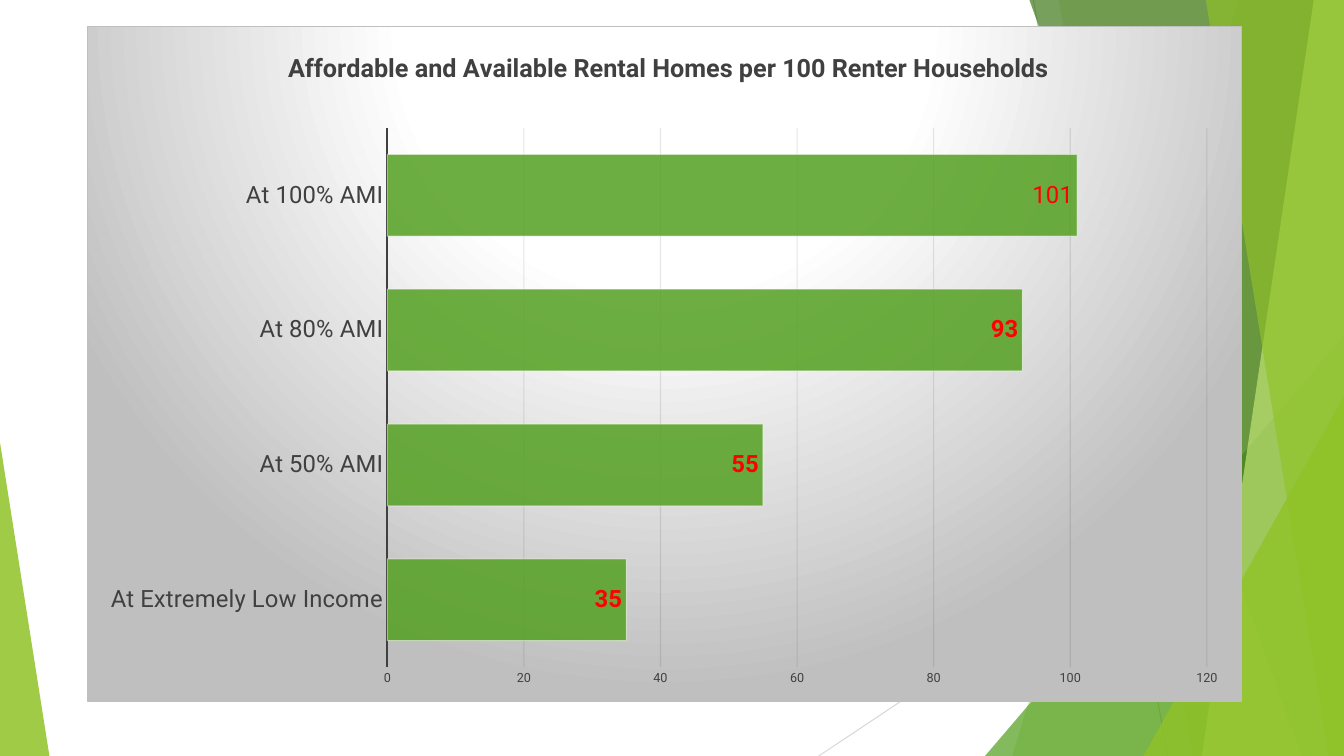
from lxml import etree
from pptx import Presentation
from pptx.chart.data import CategoryChartData
from pptx.dml.color import RGBColor
from pptx.enum.chart import XL_CHART_TYPE, XL_LABEL_POSITION, XL_TICK_MARK
from pptx.enum.shapes import MSO_CONNECTOR, MSO_SHAPE
from pptx.oxml import parse_xml
from pptx.oxml.ns import nsdecls, qn
from pptx.util import Inches, Pt

BAR_CLUSTERED = XL_CHART_TYPE.BAR_CLUSTERED
INSIDE_END = XL_LABEL_POSITION.INSIDE_END
NO_TICK = XL_TICK_MARK.NONE
STRAIGHT = MSO_CONNECTOR.STRAIGHT
TRIANGLE = MSO_SHAPE.ISOSCELES_TRIANGLE

WHITE = RGBColor(0xFF, 0xFF, 0xFF)
SILVER = RGBColor(0xBF, 0xBF, 0xBF)
PALE_GRAY = RGBColor(0xD9, 0xD9, 0xD9)
CHARCOAL = RGBColor(0x40, 0x40, 0x40)
NEAR_BLACK = RGBColor(0x0D, 0x0D, 0x0D)
RED = RGBColor(0xFF, 0x00, 0x00)
LIME = RGBColor(0x90, 0xC2, 0x26)
PALE_LIME = RGBColor(0xC0, 0xE4, 0x74)
GREEN = RGBColor(0x54, 0xA0, 0x21)
DARK_GREEN = RGBColor(0x3F, 0x78, 0x19)

FONT = "Roboto"
WIDTH, HEIGHT = 13.33, 7.5
TITLE = "Affordable and Available Rental Homes per 100 Renter Households"
HOMES = {
    "At Extremely Low Income": 35,
    "At 50% AMI": 55,
    "At 80% AMI": 93,
    "At 100% AMI": 101,
}


def set_opacity(element, percent):
    """Give the first colour inside an element an opacity."""
    color = element.find(".//" + qn("a:srgbClr"))
    etree.SubElement(color, qn("a:alpha"), val=str(percent * 1000))


def set_font(font, size, color, bold=False):
    """Set the size, colour and weight of a chart font."""
    font.name, font.size, font.bold = FONT, Pt(size), bold
    font.color.rgb = color


def paint(shape, color, opacity):
    """Fill a decorative shape without outline or shadow."""
    shape.shadow.inherit = False
    shape.fill.solid()
    shape.fill.fore_color.rgb = color
    set_opacity(shape.element, opacity)
    shape.line.fill.background()


def add_thin_line(slide, start, end, color):
    """Draw a hairline between two points."""
    points = [Inches(value) for value in (*start, *end)]
    connector = slide.shapes.add_connector(STRAIGHT, *points)
    connector.line.color.rgb = color
    connector.line.width = Pt(0.75)
    etree.SubElement(connector.element.spPr, qn("a:effectLst"))


def add_panel(slide, box, top_left, bottom_left, color, opacity):
    """Draw a slanted panel reaching the right edge of the box."""
    left, top, width, height = box
    right, bottom = left + width, top + height
    corners = [(left + top_left, top), (right, top), (right, bottom), (left + bottom_left, bottom)]
    start, *others = [(Inches(x), Inches(y)) for x, y in corners]
    builder = slide.shapes.build_freeform(*start)
    builder.add_line_segments(others)
    paint(builder.convert_to_shape(), color, opacity)


def add_wedge(slide, box, width, height, apex, color, opacity):
    """Draw a triangle in a bottom corner: apex 0 is left, 1 is right."""
    box_left, box_top, box_width, box_height = box
    left = box_left + apex * (box_width - width)
    top = box_top + box_height - height
    wedge = slide.shapes.add_shape(TRIANGLE, *map(Inches, (left, top, width, height)))
    wedge.adjustments[0] = apex
    paint(wedge, color, opacity)


def add_facets(slide, box):
    """Place the green facets along both sides of the box."""
    left, top, width, height = box
    right, bottom = left + width, top + height
    add_thin_line(slide, (left + 10.25, top), (left + 11.58, bottom), SILVER)
    add_thin_line(slide, (right, top + 4.03), (left + 8.12, bottom), PALE_GRAY)
    add_panel(slide, box, 12.28, 10.04, LIME, 30)
    add_panel(slide, box, 10.5, 11.83, LIME, 20)
    add_wedge(slide, box, 3.56, 4.17, 1, GREEN, 72)
    add_panel(slide, box, 10.21, 12.91, DARK_GREEN, 70)
    add_panel(slide, box, 13.03, 11.92, PALE_LIME, 70)
    add_panel(slide, box, 11.96, 13.18, LIME, 65)
    add_wedge(slide, box, 1.99, 3.57, 1, LIME, 80)
    add_wedge(slide, box, 0.49, 3.11, 0, LIME, 85)


def set_layout(parent, previous, x, y, size=None):
    """Place a chart part after its sibling, in fractions of the chart."""
    values = {"x": x, "y": y}
    target = ""
    if size:
        values.update(w=size[0], h=size[1])
        target = '<c:layoutTarget val="inner"/>'
    modes = "".join(f'<c:{key}Mode val="edge"/>' for key in ("x", "y"))
    places = "".join(f'<c:{key} val="{value}"/>' for key, value in values.items())
    for old_layout in parent.findall(qn("c:layout")):
        parent.remove(old_layout)
    layout = parse_xml(
        f'<c:layout {nsdecls("c")}><c:manualLayout>{target}{modes}{places}'
        "</c:manualLayout></c:layout>"
    )
    if previous is None:
        parent.insert(0, layout)
    else:
        previous.addnext(layout)


def add_chart_background(chart):
    """Give the chart area a radial gradient and a thin border."""
    stops = "".join(
        f'<a:gs pos="{position * 1000}"><a:srgbClr val="{color}"/></a:gs>'
        for position, color in ((0, WHITE), (39, WHITE), (100, SILVER))
    )
    background = parse_xml(
        f'<c:spPr {nsdecls("c", "a")}><a:gradFill><a:gsLst>{stops}</a:gsLst>'
        '<a:path path="circle"><a:fillToRect l="50000" t="-80000" r="50000" b="180000"/></a:path>'
        f'</a:gradFill><a:ln w="{Pt(0.75)}"><a:solidFill><a:srgbClr val="{SILVER}"/>'
        "</a:solidFill></a:ln></c:spPr>"
    )
    chart.element.find(qn("c:txPr")).addprevious(background)


def style_axes(chart):
    """Style the category and value axes with their gridlines."""
    category_axis, value_axis = chart.category_axis, chart.value_axis
    for axis, size in ((category_axis, 17), (value_axis, 9)):
        axis.major_tick_mark = axis.minor_tick_mark = NO_TICK
        set_font(axis.tick_labels.font, size, CHARCOAL)
    category_axis.format.line.color.rgb = CHARCOAL
    category_axis.format.line.width = Pt(1.5)
    value_axis.minimum_scale, value_axis.maximum_scale = 0, 120
    value_axis.major_unit = 20
    value_axis.format.line.fill.background()
    gridline = value_axis.major_gridlines.format.line
    gridline.color.rgb = NEAR_BLACK
    gridline.width = Pt(0.75)
    set_opacity(chart.element.find(".//" + qn("c:majorGridlines")), 10)


def style_bars(chart):
    """Style the bars and their value labels."""
    plot = chart.plots[0]
    plot.gap_width = 65
    plot.vary_by_categories = False
    series = plot.series[0]
    series.format.fill.solid()
    series.format.fill.fore_color.rgb = GREEN
    series.format.line.color.rgb = WHITE
    series.format.line.width = Pt(0.75)
    bars = chart.element.find(".//" + qn("c:ser"))
    set_opacity(bars, 85)
    set_opacity(bars.find(".//" + qn("a:ln")), 50)
    labels = series.data_labels
    labels.show_value = True
    labels.position = INSIDE_END
    set_font(labels.font, 17, RED, bold=True)
    last_label = series.points[len(HOMES) - 1].data_label
    set_font(last_label.font, 17, RED)
    last_label.position = INSIDE_END


def add_homes_chart(slide, box):
    """Place the bar chart of rental homes in the box."""
    data = CategoryChartData()
    data.categories = list(HOMES)
    data.add_series("Series 1", list(HOMES.values()))
    chart = slide.shapes.add_chart(BAR_CLUSTERED, *map(Inches, box), data).chart
    set_font(chart.font, 10, CHARCOAL)
    chart.has_legend = False
    chart.has_title = True
    paragraph = chart.chart_title.text_frame.paragraphs[0]
    paragraph.text = TITLE
    set_font(paragraph.font, 18, CHARCOAL, bold=True)
    chart.chart_title.include_in_layout = False
    title = chart.element.find(".//" + qn("c:title"))
    set_layout(title, title.find(qn("c:tx")), 0.17, 0.03)
    set_layout(chart.element.find(".//" + qn("c:plotArea")), None, 0.26, 0.15, (0.71, 0.8))
    style_axes(chart)
    style_bars(chart)
    add_chart_background(chart)


def main():
    """Build the slide and save it."""
    presentation = Presentation()
    presentation.slide_width, presentation.slide_height = Inches(WIDTH), Inches(HEIGHT)
    slide = presentation.slides.add_slide(presentation.slide_layouts[6])
    add_facets(slide, (0, 0, WIDTH, HEIGHT))
    add_homes_chart(slide, (0.86, 0.26, 11.46, 6.7))
    presentation.save("out.pptx")


if __name__ == "__main__":
    main()
